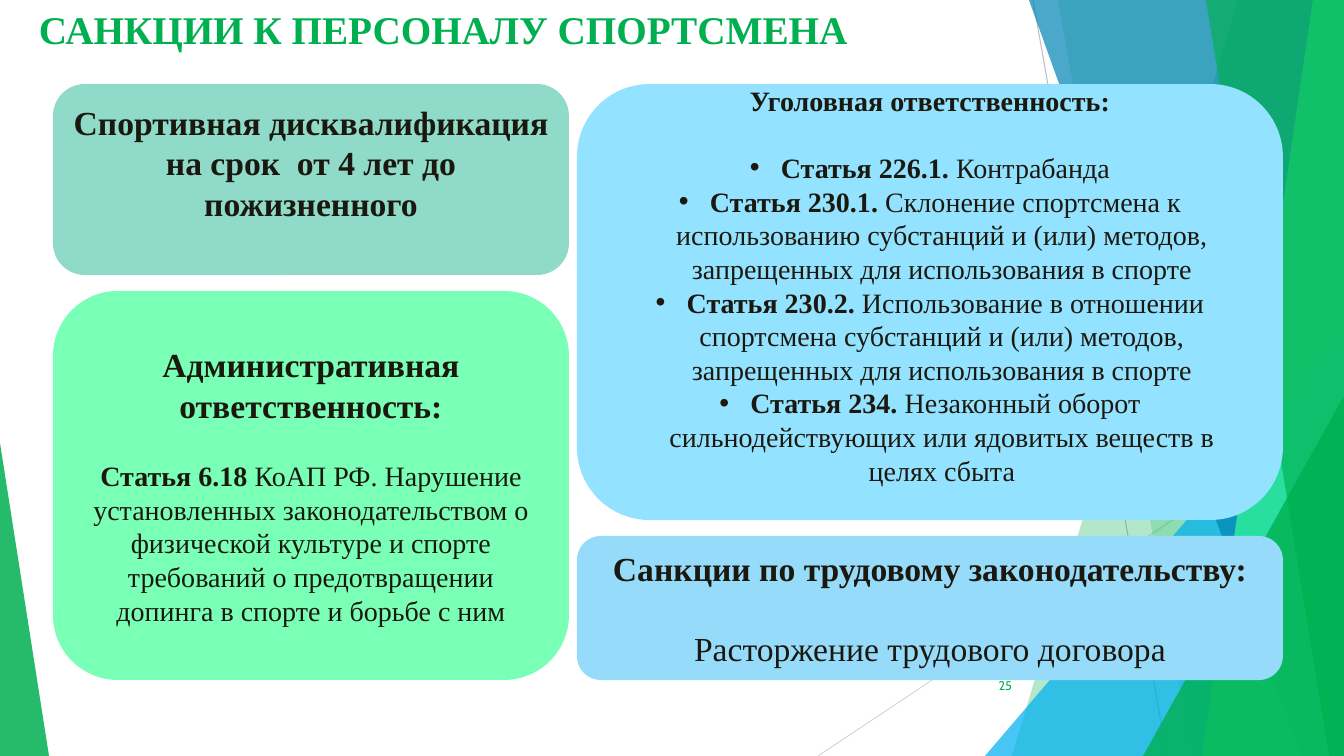
from lxml import etree
from pptx import Presentation
from pptx.dml.color import RGBColor
from pptx.enum import shapes, text
from pptx.oxml.ns import qn
from pptx.util import Pt

PX = 914400 / 100.8  # EMU per px
WIDTH, HEIGHT = 1344, 756
SERIF, SANS = "Times New Roman", "Cabin"

GREEN = RGBColor(0x00, 0xB0, 0x50)
SKY = RGBColor(0x00, 0xB0, 0xF0)
OCEAN = RGBColor(0x00, 0x84, 0xB4)
LIME = RGBColor(0x37, 0xFF, 0x92)
INK = RGBColor(0x1B, 0x19, 0x0F)
GRAY = RGBColor(0xBF, 0xBF, 0xBF)
LIGHT_GRAY = RGBColor(0xD9, 0xD9, 0xD9)
TEAL = RGBColor(0x8F, 0xDA, 0xC8)
MINT = RGBColor(0x79, 0xFF, 0xB6)
AQUA = RGBColor(0x93, 0xE2, 0xFF)
PALE_BLUE = RGBColor(0x97, 0xDB, 0xFB)

# Content: a paragraph is (size, space before, bulleted, [(words, bold)])
TITLE = [(28, 0, False, [("САНКЦИИ К ПЕРСОНАЛУ СПОРТСМЕНА", True)])]
PAGE = [(9, 0, False, [("25", False)])]
SPORT = [(24, 0, False, [("Спортивная дисквалификация на срок  от 4 лет до пожизненного", True)])]
ADMIN = [
    (24, 0, False, [("Административная ответственность:", True)]),
    (20, 24, False, [
        ("Статья 6.18 ", True),
        ("КоАП РФ. Нарушение установленных законодательством о физической культуре и спорте "
         "требований о предотвращении допинга в спорте и борьбе с ним", False)]),
]
ARTICLES = [
    ("226.1", "Контрабанда"),
    ("230.1", "Склонение спортсмена к использованию субстанций и (или) методов, "
              "запрещенных для использования в спорте"),
    ("230.2", "Использование в отношении спортсмена субстанций и (или) методов, "
              "запрещенных для использования в спорте"),
    ("234", "Незаконный оборот сильнодействующих или ядовитых веществ в целях сбыта"),
]
CRIMINAL = [(20, 0, False, [("Уголовная ответственность:", True)])] + [
    (20, 0 if i else 24, True, [(f" Статья {number}. ", True), (offence, False)])
    for i, (number, offence) in enumerate(ARTICLES)
]
LABOUR = [
    (24, 0, False, [("Санкции по трудовому законодательству:", True)]),
    (24, 28.8, False, [("Расторжение трудового договора", False)]),
]

# Cards by column: left, width, [(height, fill, paragraphs, extra bottom inset)]
CARD_TOP, CARD_BOTTOM, CARD_GAP = 84, 680, 16
COLUMNS = [
    (53, 516, [(191, TEAL, SPORT, 34), (None, MINT, ADMIN, 0)]),
    (577, 706, [(436, AQUA, CRIMINAL, 34), (None, PALE_BLUE, LABOUR, 0)]),
]

# Background, back to front
RAYS = [((1033, 0), (1167, HEIGHT), GRAY), ((WIDTH, 406), (818, HEIGHT), LIGHT_GRAY)]
FACETS = [  # band: top x, bottom x; wedge: left, top, width, apex
    ("band", (1238, 1012), GREEN, 30),
    ("band", (1058, 1192), GREEN, 20),
    ("wedge", (985, 336, 359, 1), SKY, 72),
    ("band", (1029, 1301), OCEAN, 70),
    ("band", (1313, 1202), LIME, 70),
    ("band", (1206, 1329), GREEN, 65),
    ("wedge", (1143, 396, 201, 1), GREEN, 80),
    ("wedge", (0, 443, 49, 0), GREEN, 85),
]


def px(*lengths):
    return [round(v * PX) for v in lengths]


def paint(sp, color, opacity=100):
    sp.shadow.inherit = False
    sp.line.fill.background()
    sp.fill.solid()
    sp.fill.fore_color.rgb = color
    if opacity < 100:
        clr = sp.fill._xPr.find(qn("a:solidFill"))[0]
        etree.SubElement(clr, qn("a:alpha")).set("val", str(opacity * 1000))


def write(sp, paragraphs, align, anchor, color, font=SERIF, extra=0):
    tf = sp.text_frame
    tf.word_wrap = True
    tf.vertical_anchor = anchor
    tf.margin_left, tf.margin_top, tf.margin_right, tf.margin_bottom = px(10, 5, 10, 5 + extra)
    for i, (size, before, bulleted, runs) in enumerate(paragraphs):
        p = tf.add_paragraph() if i else tf.paragraphs[0]
        p.alignment = align
        p.line_spacing = Pt(size * 1.2)
        p.space_before = Pt(before)
        if bulleted:
            pPr = p._p.get_or_add_pPr()
            hang = px(24)[0]
            pPr.set("marL", str(hang))
            pPr.set("indent", str(-hang))
            etree.SubElement(pPr, qn("a:buFont")).set("typeface", "Arial")
            etree.SubElement(pPr, qn("a:buChar")).set("char", "•")
        for words, bold in runs:
            r = p.add_run()
            r.text = words
            r.font.name, r.font.size, r.font.bold = font, Pt(size), bold
            r.font.color.rgb = color


prs = Presentation()
prs.slide_width, prs.slide_height = px(WIDTH, HEIGHT)
slide = prs.slides.add_slide(prs.slide_layouts[6])
tree = slide.shapes

# Thin rays
for start, end, color in RAYS:
    ray = tree.add_connector(shapes.MSO_CONNECTOR.STRAIGHT, *px(*start, *end))
    ray.line.color.rgb = color
    ray.line.width = Pt(0.75)
    etree.SubElement(ray._element.spPr, qn("a:effectLst"))

# Translucent facets
for kind, geometry, color, opacity in FACETS:
    if kind == "band":
        top_x, bottom_x = geometry
        outline = tree.build_freeform(*px(top_x, 0), scale=1.0)
        corners = [(WIDTH, 0), (WIDTH, HEIGHT), (bottom_x, HEIGHT)]
        outline.add_line_segments([px(*corner) for corner in corners], close=True)
        sp = outline.convert_to_shape()
    else:
        left, top, width, apex = geometry
        sp = tree.add_shape(shapes.MSO_SHAPE.ISOSCELES_TRIANGLE, *px(left, top, width, HEIGHT - top))
        sp.adjustments[0] = apex
    paint(sp, color, opacity)

# Title and page number
write(tree.add_textbox(*px(29, 0, 1143, 66)), TITLE,
      text.PP_ALIGN.LEFT, text.MSO_ANCHOR.TOP, GREEN)
write(tree.add_textbox(*px(946, 666, 76, 40)), PAGE,
      text.PP_ALIGN.RIGHT, text.MSO_ANCHOR.MIDDLE, GREEN, SANS)

# Cards; the last one in a column fills what is left
for left, width, cards in COLUMNS:
    top = CARD_TOP
    for height, fill, paragraphs, extra in cards:
        height = height or CARD_BOTTOM - top
        sp = tree.add_shape(shapes.MSO_SHAPE.ROUNDED_RECTANGLE, *px(left, top, width, height))
        paint(sp, fill)
        write(sp, paragraphs, text.PP_ALIGN.CENTER, text.MSO_ANCHOR.MIDDLE, INK, extra=extra)
        top += height + CARD_GAP

prs.save("out.pptx")
